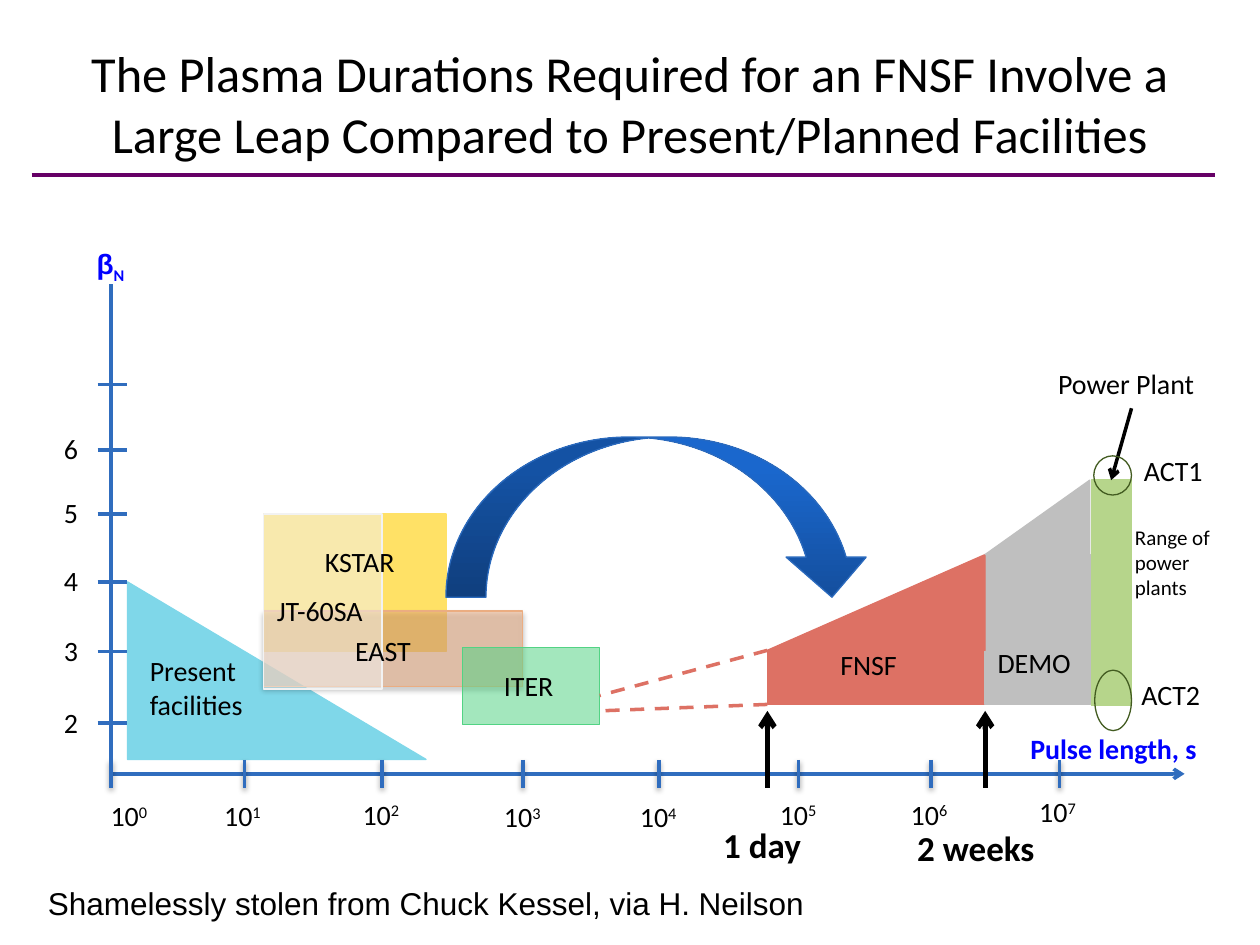
from lxml import etree
from pptx import Presentation
from pptx.dml.color import RGBColor
from pptx.enum.dml import MSO_LINE
from pptx.enum.shapes import MSO_CONNECTOR, MSO_SHAPE
from pptx.enum.text import MSO_ANCHOR, MSO_AUTO_SIZE, PP_ALIGN
from pptx.oxml.ns import qn
from pptx.util import Cm, Pt

RECT = MSO_SHAPE.RECTANGLE
TRIANGLE = MSO_SHAPE.RIGHT_TRIANGLE
OVAL = MSO_SHAPE.OVAL
LEAP = MSO_SHAPE.CURVED_DOWN_ARROW
STRAIGHT = MSO_CONNECTOR.STRAIGHT
DASH = MSO_LINE.DASH
CENTER = PP_ALIGN.CENTER
FIT = MSO_AUTO_SIZE.SHAPE_TO_FIT_TEXT
MIDDLE = MSO_ANCHOR.MIDDLE

BLACK, BLUE, AXIS = "000000", "0000FF", "306DBE"
FNSF, DEMO, PLANT, RING = "DD7164", "BFBFBF", "B6D58B", "425B20"


def rgb(code):
    return RGBColor.from_string(code)


class PlasmaSlide:
    """Holds the text style and the slide, and draws each kind of element."""

    def __init__(self, slide, font="Calibri", size=16):
        self.slide, self.font, self.size = slide, font, size

    def style(self, run, size=None, color=BLACK, bold=False, font=None):
        run.font.name = font or self.font
        run.font.size = Pt(size or self.size)
        run.font.bold = bold
        run.font.color.rgb = rgb(color)

    def title(self, text, left, top, width, height):
        heading = self.slide.shapes.title
        heading.left, heading.top = Cm(left), Cm(top)
        heading.width, heading.height = Cm(width), Cm(height)
        heading.text_frame.text = text
        heading.text_frame.vertical_anchor = MIDDLE
        heading.text_frame.paragraphs[0].alignment = CENTER
        self.style(heading.text_frame.paragraphs[0].runs[0], 28.8)

    def label(self, text, left, top, width, height=0.97, wrap=False, **style):
        box = self.slide.shapes.add_textbox(Cm(left), Cm(top), Cm(width), Cm(height))
        frame = box.text_frame
        frame.word_wrap = wrap
        frame.auto_size = FIT
        frame.text = text
        self.style(frame.paragraphs[0].runs[0], **style)
        return frame.paragraphs[0]

    def script_label(self, base, script, offset, left, top, width, script_font=None, **style):
        paragraph = self.label(base, left, top, width, **style)
        run = paragraph.add_run()
        run.text = script
        self.style(run, **{**style, "font": script_font})
        run.font._element.set("baseline", str(offset * 1000))

    def shadow(self, shape, alpha, distance):
        effects = shape._element.spPr.find(qn("a:effectLst"))
        outer = etree.SubElement(effects, qn("a:outerShdw"), blurRad=str(Pt(3.1)),
                                 dist=str(Pt(distance)), dir="5400000", rotWithShape="0")
        color = etree.SubElement(outer, qn("a:srgbClr"), val=BLACK)
        etree.SubElement(color, qn("a:alpha"), val=str(alpha * 1000))

    def line(self, x1, y1, x2, y2, color=AXIS, width=2, arrow=False, dash=None):
        connector = self.slide.shapes.add_connector(STRAIGHT, Cm(x1), Cm(y1), Cm(x2), Cm(y2))
        connector.line.color.rgb = rgb(color)
        connector.line.width = Pt(width)
        if dash:
            connector.line.dash_style = dash
        if arrow:
            etree.SubElement(connector.line._get_or_add_ln(), qn("a:tailEnd"), type="arrow")
        etree.SubElement(connector._element.spPr, qn("a:effectLst"))
        return connector

    def shape(self, kind, left, top, width, height, color=None, edge=None, alpha=None, flip=False):
        item = self.slide.shapes.add_shape(kind, Cm(left), Cm(top), Cm(width), Cm(height))
        item.shadow.inherit = False
        item.line.color.rgb = rgb(edge or color)
        item.line.width = Pt(0.75)
        if color:
            item.fill.solid()
            item.fill.fore_color.rgb = rgb(color)
        else:
            item.fill.background()
        if alpha:
            tint = item._element.spPr.find(qn("a:solidFill"))[0]
            etree.SubElement(tint, qn("a:alpha"), val=str(alpha * 1000))
        if flip:
            item._element.spPr.find(qn("a:xfrm")).set("flipH", "1")
        return item

    def leap_arrow(self, left, top, width, height):
        arrow = self.shape(LEAP, left, top, width, height, edge="2B6ABD")
        arrow.fill.gradient()
        arrow.fill.gradient_angle = 90
        dark, light = arrow.fill.gradient_stops
        dark.color.rgb, dark.position = rgb("144F9E"), 0
        light.color.rgb, light.position = rgb("1A67CD"), 0.8


def draw_axes(plasma):
    plasma.line(2.24, 15.6, 23.88, 15.6, arrow=True)
    decades = [(2.24, 1.98, 15.98), (4.93, 4.27, 15.98), (7.7, 7.06, 15.95), (10.54, 9.91, 16),
               (13.28, 12.65, 16), (16.1, 15.47, 15.95), (18.77, 18.11, 15.95), (21.36, 20.7, 15.9)]
    for power, (tick, left, top) in enumerate(decades):
        plasma.shadow(plasma.line(tick, 15.32, tick, 15.88), 38, 1.6)
        plasma.script_label("10", str(power), 30, left, top, 1.3)

    plasma.line(2.24, 15.32, 2.24, 5.72)
    plasma.script_label("β", "N", -25, 1.7, 4.85, 1.12, color=BLUE, bold=True, font="Arial")
    for beta, tick in enumerate([14.58, 13.13, 11.73, 10.36, 9.07, 7.75], start=2):
        plasma.line(1.97, tick, 2.56, tick)
        if beta < 7:
            plasma.label(str(beta), 1.04, tick - 0.49, 0.81, 0.94)


def draw_facilities(plasma):
    plasma.shape(RECT, 22, 9.68, 0.81, 4.55, PLANT)
    plasma.shape(RECT, 15.47, 13.11, 4.39, 1.09, FNSF)
    plasma.shape(RECT, 5.31, 10.36, 3.68, 2.77, "FFE166")
    east = plasma.shape(RECT, 5.31, 12.32, 5.23, 1.52, "EBAD81", alpha=53)
    plasma.shadow(east, 35, 1.8)
    plasma.shape(RECT, 9.32, 13.06, 2.77, 1.55, "52D384", alpha=53)
    plasma.line(22.81, 8.23, 22.4, 9.68, BLACK, arrow=True)
    plasma.leap_arrow(8.99, 8.81, 8.59, 3.23)
    plasma.shape(OVAL, 22.07, 13.51, 0.74, 1.22, edge=RING)
    plasma.shape(OVAL, 22.05, 9.19, 0.76, 0.79, edge=RING)
    plasma.shape(RECT, 19.86, 11.18, 2.13, 3.02, DEMO)
    plasma.shape(TRIANGLE, 15.47, 11.18, 4.39, 1.93, FNSF, flip=True)
    plasma.shape(TRIANGLE, 19.86, 9.68, 2.11, 1.5, DEMO, flip=True)
    plasma.shape(RECT, 5.31, 10.36, 2.39, 3.53, "F2F2F2", alpha=51)

    for name, left, top, width in [
        ("FNSF", 16.69, 12.93, 1.7), ("Power Plant", 21.08, 7.26, 3.43),
        ("ITER", 9.91, 13.36, 1.55), ("ACT1", 22.81, 9.02, 1.73),
        ("ACT2", 22.76, 13.54, 1.73), ("DEMO", 19.86, 12.88, 2.06),
        ("JT-60SA", 5.33, 11.84, 2.36), ("KSTAR", 6.3, 10.85, 2.03),
        ("EAST", 6.91, 12.65, 1.68),
    ]:
        plasma.label(name, left, top, width)
    plasma.label("Present facilities", 2.77, 13.06, 2.46, 1.68, wrap=True)
    plasma.label("Range of power plants", 22.63, 10.44, 2.16, 1.8, wrap=True, size=12)
    plasma.label("Pulse length, s", 20.52, 14.63, 4.04, color=BLUE, bold=True)


def draw_durations(plasma):
    for start, end in [(13.11, 14.02), (14.2, 14.33)]:
        plasma.line(15.47, start, 12.09, end, FNSF, dash=DASH)
    for duration, left, top, width, mark in [
        ("1 day", 14.33, 16.48, 2.11, 15.47), ("2 weeks", 18.24, 16.54, 2.92, 19.86),
    ]:
        plasma.label(duration, left, top, width, 1.12, size=20, bold=True)
        plasma.line(mark, 15.88, mark, 14.33, BLACK, 3, arrow=True)


def main():
    deck = Presentation()
    deck.slide_width, deck.slide_height = Cm(25.4), Cm(19.05)
    plasma = PlasmaSlide(deck.slides.add_slide(deck.slide_layouts[5]))
    plasma.title("The Plasma Durations Required for an FNSF Involve a Large Leap "
                 "Compared to Present/Planned Facilities", 1.27, 0.48, 22.86, 3.18)
    plasma.line(0.64, 3.53, 24.49, 3.53, "660066")
    plasma.shape(TRIANGLE, 2.57, 11.73, 6.02, 3.58, "7FD7E9")
    draw_axes(plasma)
    draw_facilities(plasma)
    draw_durations(plasma)
    credit = plasma.label("Shamelessly stolen from Chuck Kessel, via H. Neilson",
                          0.64, 17.78, 15.9, 0.94, size=18, font="Arial")
    credit.alignment = CENTER
    credit.line_spacing = 0.9
    deck.save("out.pptx")


if __name__ == "__main__":
    main()
